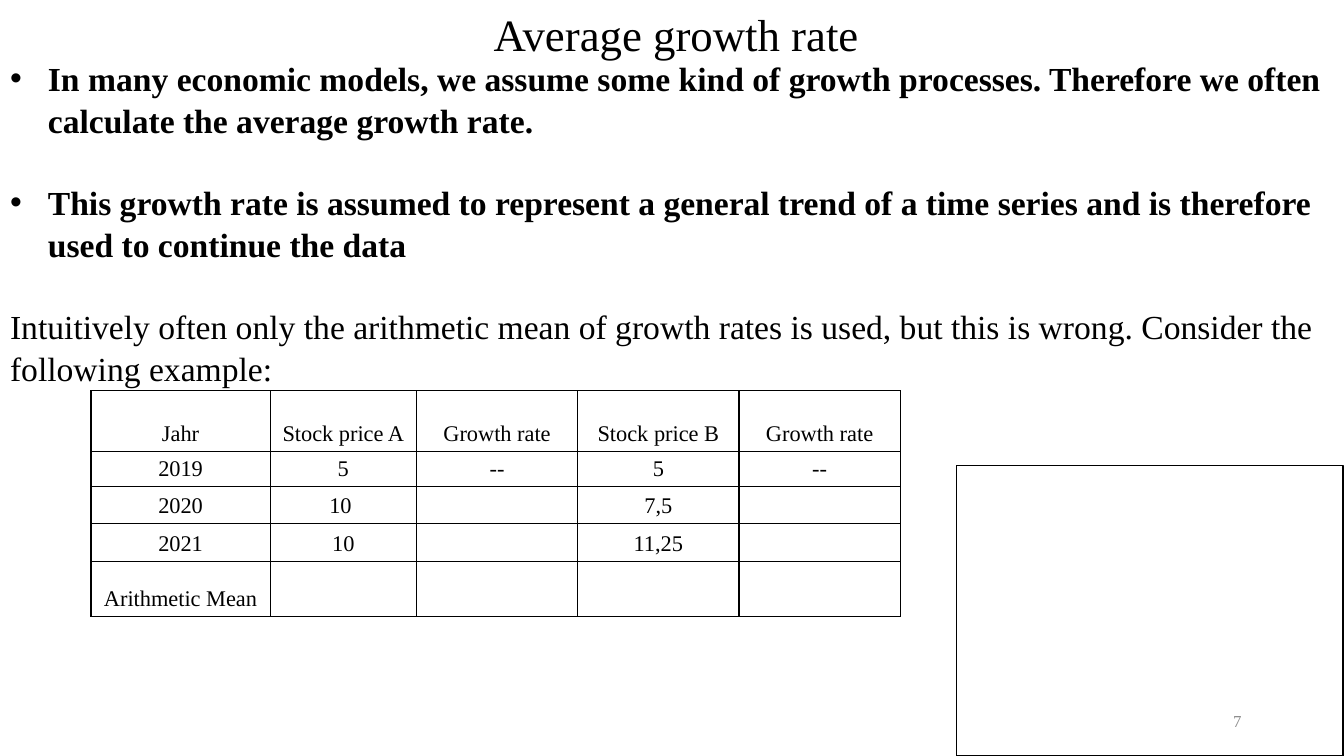
from pptx import Presentation
from pptx.dml.color import RGBColor
from pptx.enum.shapes import MSO_SHAPE
from pptx.enum.text import MSO_ANCHOR, MSO_AUTO_SIZE, PP_ALIGN
from pptx.oxml.xmlchemy import OxmlElement
from pptx.util import Pt

CENTER, RIGHT, LEFT = PP_ALIGN.CENTER, PP_ALIGN.RIGHT, PP_ALIGN.LEFT
TOP, MIDDLE, BOTTOM = MSO_ANCHOR.TOP, MSO_ANCHOR.MIDDLE, MSO_ANCHOR.BOTTOM
NO_FIT = MSO_AUTO_SIZE.NONE
RECTANGLE = MSO_SHAPE.RECTANGLE

COLORS = {"ink": "000000", "page_number": "8C8C8C"}
FONT = "Times New Roman"
TITLE_SIZE, BODY_SIZE, TABLE_SIZE, NUMBER_SIZE = 32, 24, 16, 12

# (text, is a bold bullet)
BODY = [
    ("In many economic models, we assume some kind of growth processes. "
     "Therefore we often calculate the average growth rate.", True),
    ("This growth rate is assumed to represent a general trend of a time series "
     "and is therefore used to continue the data", True),
    ("Intuitively often only the arithmetic mean of growth rates is used, "
     "but this is wrong. Consider the following example:", False),
]
STOCKS = [
    ["Jahr", "Stock price A", "Growth rate", "Stock price B", "Growth rate"],
    ["2019", "5", "--", "5", "--"],
    ["2020", "10 ", "", "7,5", ""],
    ["2021", "10", "", "11,25", ""],
    ["Arithmetic Mean", "", "", "", ""],
]
COLUMN_WIDTHS = [128, 104.5, 115.2, 115.2, 115.2]
ROW_HEIGHTS = [43.2, 25, 25, 25, 39.6]


def add_element(parent, tag, **attributes):
    element = OxmlElement(tag)
    for name, value in attributes.items():
        element.set(name, value)
    parent.append(element)
    return element


class SlideBuilder:
    def __init__(self, slide):
        self.slide = slide

    def place(self, shape, left, top, width, height):
        shape.left, shape.top = Pt(left), Pt(top)
        shape.width, shape.height = Pt(width), Pt(height)

    def prepare_frame(self, text_frame, anchor):
        text_frame.word_wrap = True
        text_frame.auto_size = NO_FIT
        text_frame.vertical_anchor = anchor

    def add_text(self, paragraph, text, size, align, color="ink", bold=False):
        paragraph.alignment = align
        run = paragraph.add_run()
        run.text = text
        run.font.name, run.font.size, run.font.bold = FONT, Pt(size), bold
        run.font.color.rgb = RGBColor.from_string(COLORS[color])

    def title(self, text, *box):
        shape = self.slide.shapes.title
        self.place(shape, *box)
        self.prepare_frame(shape.text_frame, TOP)
        self.add_text(shape.text_frame.paragraphs[0], text, TITLE_SIZE, CENTER)

    def body(self, items, *box):
        shape = self.slide.placeholders[1]
        self.place(shape, *box)
        text_frame = shape.text_frame
        self.prepare_frame(text_frame, TOP)
        for index, (text, is_bullet) in enumerate(items):
            paragraph = text_frame.add_paragraph() if index else text_frame.paragraphs[0]
            properties = paragraph._p.get_or_add_pPr()
            indent = Pt(27) if is_bullet else 0
            properties.set("marL", str(indent))
            properties.set("indent", str(-indent))
            if is_bullet:
                add_element(properties, "a:buFont", typeface="Arial")
                add_element(properties, "a:buChar", char="•")
            else:
                add_element(properties, "a:buNone")
            paragraph.line_spacing = 1.045
            paragraph.space_before = Pt(28.8 if index else 0)
            self.add_text(paragraph, text, BODY_SIZE, LEFT, bold=is_bullet)

    def text_box(self, text, size, color, align, *box):
        shape = self.slide.shapes.add_textbox(*map(Pt, box))
        self.prepare_frame(shape.text_frame, MIDDLE)
        self.add_text(shape.text_frame.paragraphs[0], text, size, align, color)

    def frame(self, *box):
        shape = self.slide.shapes.add_shape(RECTANGLE, *map(Pt, box))
        shape.shadow.inherit = False
        shape.fill.background()
        shape.line.color.rgb = RGBColor.from_string(COLORS["ink"])
        shape.line.width = Pt(1)

    def cell_borders(self, cell):
        properties = cell._tc.get_or_add_tcPr()
        for side in ("a:lnL", "a:lnR", "a:lnT", "a:lnB"):
            line = add_element(properties, side, w=str(Pt(1)))
            fill = add_element(line, "a:solidFill")
            add_element(fill, "a:srgbClr", val=COLORS["ink"])

    def table(self, rows, left, top, widths, heights):
        table = self.slide.shapes.add_table(
            len(rows), len(widths), Pt(left), Pt(top),
            Pt(sum(widths)), Pt(sum(heights))).table
        table.first_row = table.horz_banding = False
        for column, width in zip(table.columns, widths):
            column.width = Pt(width)
        for row, height, texts in zip(table.rows, heights, rows):
            row.height = Pt(height)
            for cell, text in zip(row.cells, texts):
                self.cell_borders(cell)
                cell.fill.background()
                cell.vertical_anchor = BOTTOM
                paragraph = cell.text_frame.paragraphs[0]
                if text:
                    self.add_text(paragraph, text, TABLE_SIZE, CENTER)
                else:
                    add_element(paragraph._p, "a:endParaRPr", sz=str(TABLE_SIZE * 100))


def main():
    presentation = Presentation()
    presentation.slide_width, presentation.slide_height = Pt(960), Pt(540)
    slide = presentation.slides.add_slide(presentation.slide_layouts[1])
    builder = SlideBuilder(slide)

    # Page number, heading and text
    builder.text_box("7", NUMBER_SIZE, "page_number", RIGHT, 678, 500.5, 216, 28.8)
    builder.title("Average growth rate", 134, 1.5, 698, 51)
    builder.body(BODY, 0, 36.7, 960, 242.6)

    # Empty frame for calculations
    builder.frame(683.3, 332.6, 276, 207.4)

    # Stock price example
    builder.table(STOCKS, 65, 279, COLUMN_WIDTHS, ROW_HEIGHTS)

    presentation.save("out.pptx")


if __name__ == "__main__":
    main()
